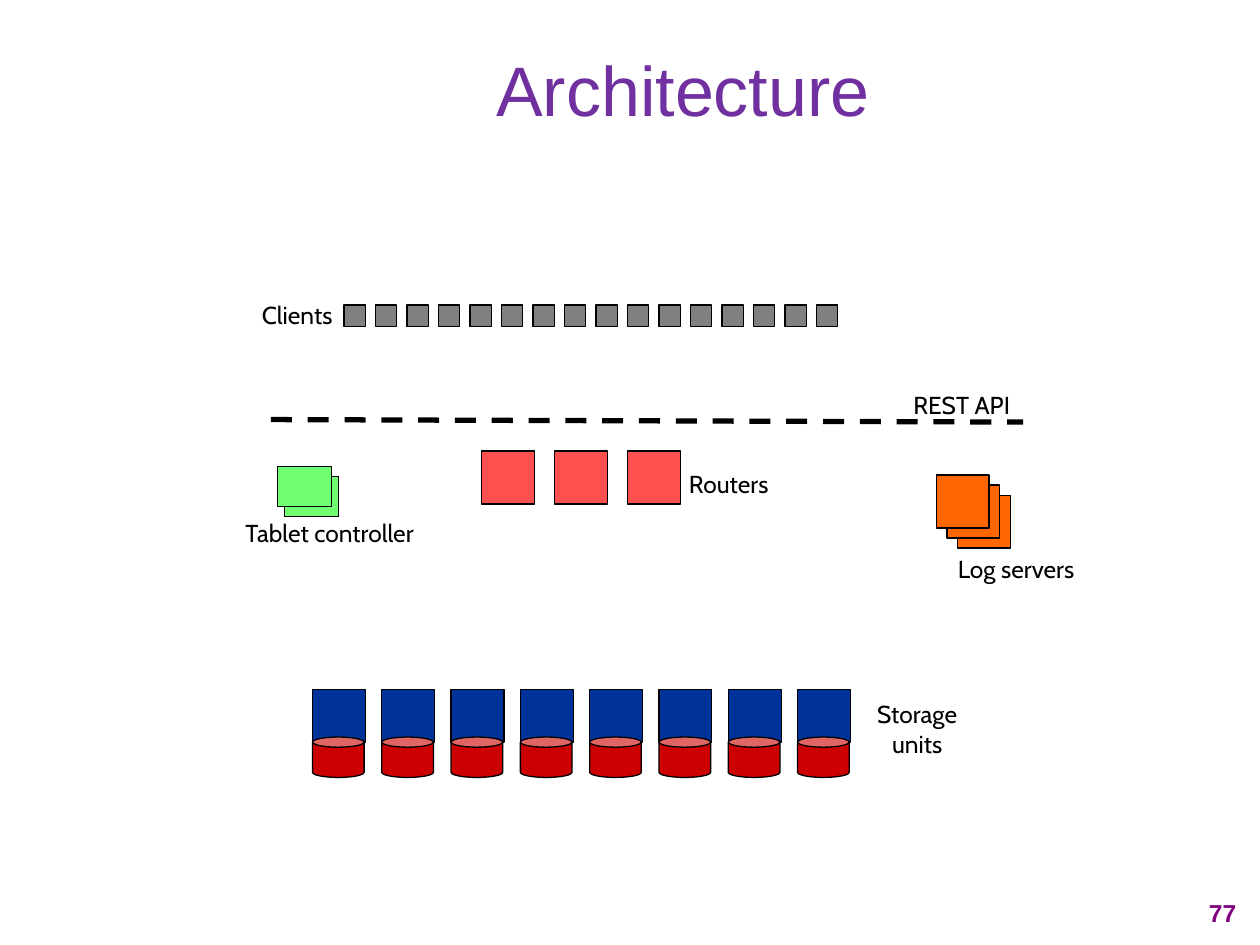
from dataclasses import dataclass

from lxml import etree
from pptx import Presentation
from pptx.dml.color import RGBColor
from pptx.enum.dml import MSO_LINE
from pptx.enum.shapes import MSO_CONNECTOR, MSO_SHAPE
from pptx.enum.text import MSO_ANCHOR, PP_ALIGN
from pptx.oxml.ns import qn
from pptx.slide import Slide
from pptx.util import Inches, Pt

RECT, CAN = MSO_SHAPE.RECTANGLE, MSO_SHAPE.CAN
STRAIGHT, DASH = MSO_CONNECTOR.STRAIGHT, MSO_LINE.DASH
LEFT, CENTER, RIGHT = PP_ALIGN.LEFT, PP_ALIGN.CENTER, PP_ALIGN.RIGHT
TOP, MIDDLE = MSO_ANCHOR.TOP, MSO_ANCHOR.MIDDLE

COLORS = {
    "title": "7030A0",
    "page": "800080",
    "ink": "000000",
    "client": "808080",
    "router": "FF5050",
    "controller": "71FF71",
    "log": "FF6600",
    "storage": "003399",
    "disk": "CC0000",
}


@dataclass
class Label:
    text: str
    left: float
    top: float
    width: float
    height: float = 0.33
    align: PP_ALIGN = LEFT
    anchor: MSO_ANCHOR = TOP
    size: int = 14
    font: str = "Cabin"
    color: str = "ink"
    bold: bool = False
    wrap: bool = False


@dataclass
class Series:
    color: str
    count: int
    left: float
    top: float
    width: float
    height: float
    step_x: float
    step_y: float = 0
    preset: MSO_SHAPE = RECT


LABELS = [
    Label("77", 9.33, 7.08, 0.58, align=RIGHT, font="Arial", color="page",
          bold=True, wrap=True),
    Label("Architecture", 0.92, 0.08, 9, 1.25, CENTER, MIDDLE, 40, "Arial",
          "title", wrap=True),
    Label("Clients", 1.98, 2.33, 0.77),
    Label("REST API", 7.15, 3.05, 1.01),
    Label("Routers", 5.37, 3.67, 0.86),
    Label("Tablet controller", 1.85, 4.06, 1.6),
    Label("Log servers", 7.43, 4.35, 1.27, align=CENTER, wrap=True),
    Label("Storage\nunits", 6.85, 5.5, 0.86, 0.57, CENTER),
]

SERIES = [
    Series("client", 16, 2.73, 2.42, 0.17, 0.17, 0.25),
    Series("router", 3, 3.82, 3.58, 0.42, 0.42, 0.58),
    Series("controller", 2, 2.26, 3.78, 0.43, 0.32, -0.06, -0.08),
    Series("log", 3, 7.6, 3.93, 0.42, 0.42, -0.085, -0.08),
    Series("storage", 8, 2.48, 5.47, 0.42, 0.42, 0.55),
    Series("disk", 8, 2.48, 5.85, 0.41, 0.32, 0.55, preset=CAN),
]


def rgb(name: str) -> RGBColor:
    return RGBColor.from_string(COLORS[name])


def draw_label(slide: Slide, label: Label) -> None:
    box = slide.shapes.add_textbox(Inches(label.left), Inches(label.top),
                                   Inches(label.width), Inches(label.height))
    frame = box.text_frame
    frame.word_wrap = label.wrap
    frame.vertical_anchor = label.anchor
    frame.text = label.text
    for paragraph in frame.paragraphs:
        paragraph.alignment = label.align
        paragraph.font.name = label.font
        paragraph.font.size = Pt(label.size)
        paragraph.font.bold = label.bold
        paragraph.font.color.rgb = rgb(label.color)


def draw_series(slide: Slide, series: Series) -> None:
    for index in range(series.count):
        node = slide.shapes.add_shape(
            series.preset,
            Inches(series.left + index * series.step_x),
            Inches(series.top + index * series.step_y),
            Inches(series.width), Inches(series.height))
        node.shadow.inherit = False
        node.fill.solid()
        node.fill.fore_color.rgb = rgb(series.color)
        node.line.color.rgb = rgb("ink")
        node.line.width = Pt(0.75)


def draw_api_boundary(slide: Slide) -> None:
    boundary = slide.shapes.add_connector(
        STRAIGHT, Inches(2.15), Inches(3.33), Inches(8.12), Inches(3.35))
    boundary.line.color.rgb = rgb("ink")
    boundary.line.width = Pt(3)
    boundary.line.dash_style = DASH
    etree.SubElement(boundary._element.spPr, qn("a:effectLst"))


def main() -> None:
    deck = Presentation()
    deck.slide_width, deck.slide_height = Inches(10), Inches(7.5)
    slide = deck.slides.add_slide(deck.slide_layouts[6])
    draw_api_boundary(slide)
    for series in SERIES:
        draw_series(slide, series)
    for label in LABELS:
        draw_label(slide, label)
    deck.save("out.pptx")


if __name__ == "__main__":
    main()
